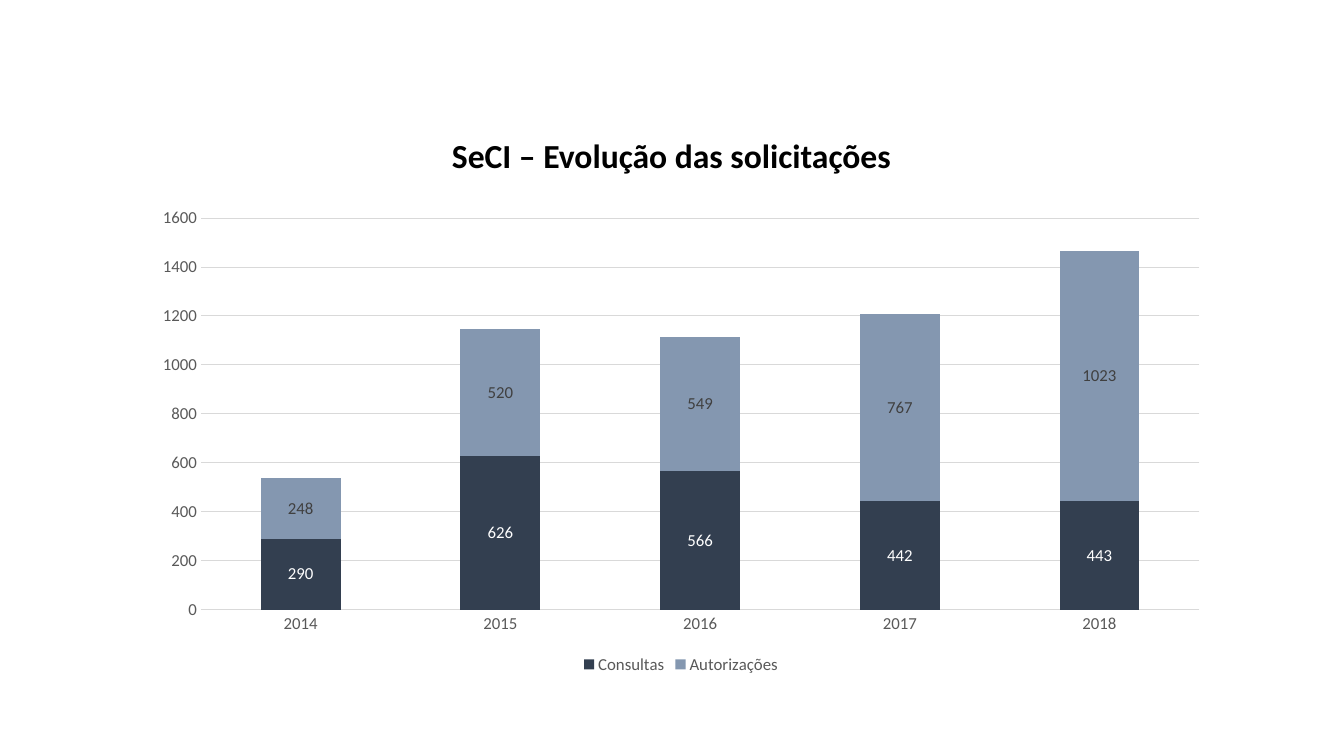
from dataclasses import dataclass

from pptx import Presentation
from pptx.chart.data import CategoryChartData
from pptx.dml.color import RGBColor
from pptx.enum.chart import XL_CHART_TYPE, XL_LABEL_POSITION, XL_LEGEND_POSITION, XL_TICK_MARK
from pptx.enum.text import MSO_ANCHOR, MSO_AUTO_SIZE, PP_ALIGN
from pptx.util import Inches, Pt


@dataclass(frozen=True)
class Theme:
    font: str = "Calibri"
    title_size: int = 24
    chart_size: int = 12
    title_color: str = "000000"
    axis_text: str = "595959"
    rule: str = "D9D9D9"
    rule_width: float = 0.75


THEME = Theme()

YEARS = ["2014", "2015", "2016", "2017", "2018"]
REQUESTS = [
    ("Consultas", [290, 626, 566, 442, 443], "333F50", "FFFFFF"),
    ("Autorizações", [248, 520, 549, 767, 1023], "8497B0", "404040"),
]
NUMBER_FORMAT = "###0"


def style_font(font, size, color, bold=False):
    font.name = THEME.font
    font.size = Pt(size)
    font.bold = bold
    font.color.rgb = RGBColor.from_string(color)


def style_rule(line):
    line.color.rgb = RGBColor.from_string(THEME.rule)
    line.width = Pt(THEME.rule_width)


def place_title(slide, text, left, top, width, height):
    title = slide.shapes.title
    title.left, title.top = Inches(left), Inches(top)
    title.width, title.height = Inches(width), Inches(height)
    text_frame = title.text_frame
    text_frame.text = text
    text_frame.word_wrap = True
    text_frame.auto_size = MSO_AUTO_SIZE.NONE
    text_frame.vertical_anchor = MSO_ANCHOR.MIDDLE
    paragraph = text_frame.paragraphs[0]
    paragraph.alignment = PP_ALIGN.CENTER
    paragraph.line_spacing = 0.9
    style_font(paragraph.runs[0].font, THEME.title_size, THEME.title_color, bold=True)


def style_axes(chart):
    for axis in (chart.category_axis, chart.value_axis):
        axis.major_tick_mark = XL_TICK_MARK.NONE
        axis.minor_tick_mark = XL_TICK_MARK.NONE
        style_font(axis.tick_labels.font, THEME.chart_size, THEME.axis_text)
    style_rule(chart.category_axis.format.line)
    value_axis = chart.value_axis
    value_axis.minimum_scale = 0
    value_axis.maximum_scale = 1600
    value_axis.major_unit = 200
    value_axis.format.line.fill.background()
    value_axis.has_major_gridlines = True
    style_rule(value_axis.major_gridlines.format.line)
    value_axis.tick_labels.number_format = NUMBER_FORMAT
    value_axis.tick_labels.number_format_is_linked = False


def style_series(series, fill_color, label_color):
    series.format.fill.solid()
    series.format.fill.fore_color.rgb = RGBColor.from_string(fill_color)
    series.format.line.fill.background()
    labels = series.data_labels
    labels.show_value = True
    labels.position = XL_LABEL_POSITION.CENTER
    labels.number_format = NUMBER_FORMAT
    labels.number_format_is_linked = False
    style_font(labels.font, THEME.chart_size, label_color)


def place_requests_chart(slide, left, top, width, height):
    chart_data = CategoryChartData(number_format=NUMBER_FORMAT)
    chart_data.categories = YEARS
    for name, values, _, _ in REQUESTS:
        chart_data.add_series(name, values)
    chart = slide.shapes.add_chart(
        XL_CHART_TYPE.COLUMN_STACKED,
        Inches(left), Inches(top), Inches(width), Inches(height),
        chart_data,
    ).chart
    style_font(chart.font, THEME.chart_size, THEME.axis_text)
    chart.has_title = False
    chart.has_legend = True
    chart.legend.position = XL_LEGEND_POSITION.BOTTOM
    chart.legend.include_in_layout = False
    style_font(chart.legend.font, THEME.chart_size, THEME.axis_text)
    style_axes(chart)
    plot = chart.plots[0]
    plot.gap_width = 150
    plot.overlap = 100
    plot.vary_by_categories = False
    for series, (_, _, fill_color, label_color) in zip(plot.series, REQUESTS):
        style_series(series, fill_color, label_color)


def build_requests_slide(presentation):
    slide = presentation.slides.add_slide(presentation.slide_layouts[5])
    place_title(slide, "SeCI – Evolução das solicitações", 2.35, 1.35, 8.62, 0.43)
    place_requests_chart(slide, 1.4, 1.97, 10.71, 4.76)


def main():
    presentation = Presentation()
    presentation.slide_width = Inches(13.33)
    presentation.slide_height = Inches(7.5)
    build_requests_slide(presentation)
    presentation.save("out.pptx")


if __name__ == "__main__":
    main()
